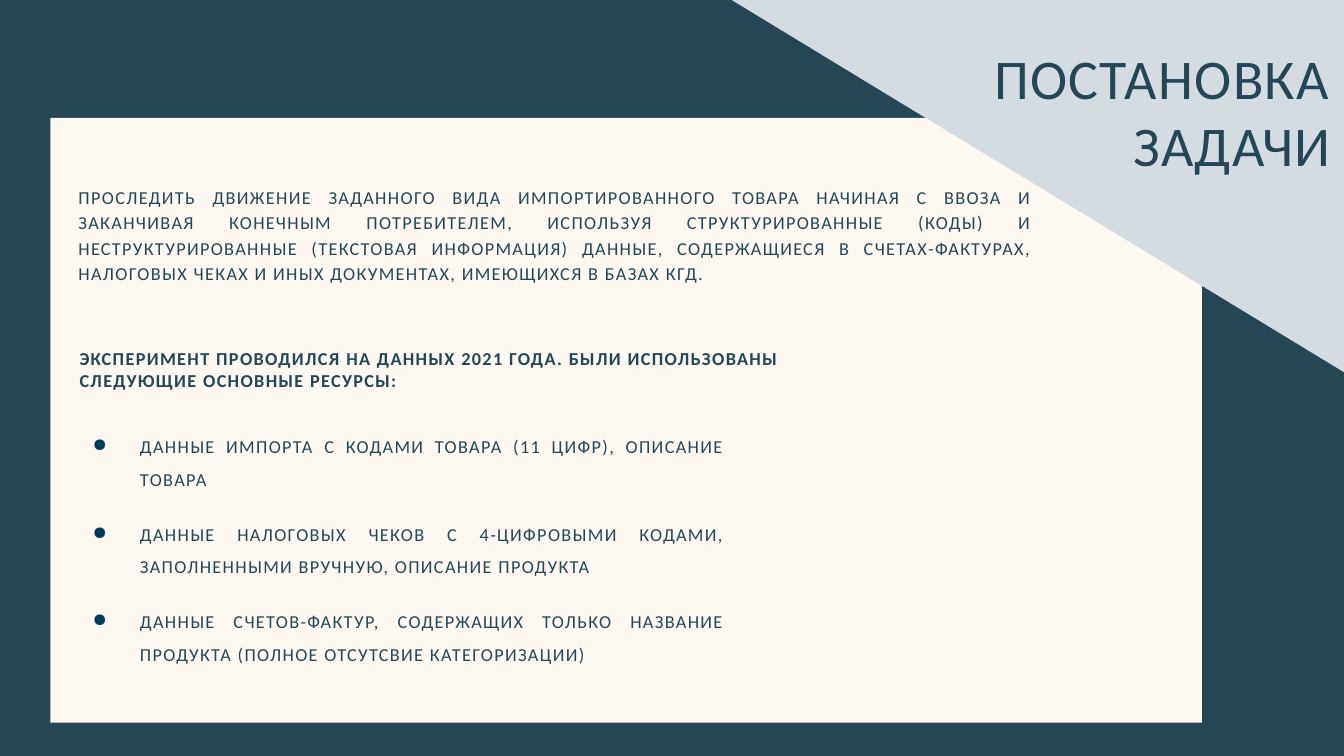
from lxml import etree
from pptx import Presentation
from pptx.dml.color import RGBColor
from pptx.enum import shapes, text
from pptx.oxml import ns
from pptx.util import Inches, Pt

NAVY, CREAM, MIST, BULLET = "244655", "FEF8F2", "D5DCE1", "003B5C"
TASK = (
    "ПРОСЛЕДИТЬ ДВИЖЕНИЕ ЗАДАННОГО ВИДА ИМПОРТИРОВАННОГО ТОВАРА НАЧИНАЯ С ВВОЗА И "
    "ЗАКАНЧИВАЯ КОНЕЧНЫМ ПОТРЕБИТЕЛЕМ, ИСПОЛЬЗУЯ СТРУКТУРИРОВАННЫЕ (КОДЫ) И "
    "НЕСТРУКТУРИРОВАННЫЕ (ТЕКСТОВАЯ ИНФОРМАЦИЯ) ДАННЫЕ, СОДЕРЖАЩИЕСЯ В "
    "СЧЕТАХ-ФАКТУРАХ, НАЛОГОВЫХ ЧЕКАХ И ИНЫХ ДОКУМЕНТАХ, ИМЕЮЩИХСЯ В БАЗАХ КГД."
)
EXPERIMENT = (
    "ЭКСПЕРИМЕНТ ПРОВОДИЛСЯ НА ДАННЫХ 2021 ГОДА. БЫЛИ ИСПОЛЬЗОВАНЫ "
    "СЛЕДУЮЩИЕ ОСНОВНЫЕ РЕСУРСЫ:"
)
RESOURCES = [
    "ДАННЫЕ ИМПОРТА С КОДАМИ ТОВАРА (11 ЦИФР), ОПИСАНИЕ ТОВАРА",
    "ДАННЫЕ НАЛОГОВЫХ ЧЕКОВ С 4-ЦИФРОВЫМИ КОДАМИ, ЗАПОЛНЕННЫМИ ВРУЧНУЮ, ОПИСАНИЕ ПРОДУКТА",
    "ДАННЫЕ СЧЕТОВ-ФАКТУР, СОДЕРЖАЩИХ ТОЛЬКО НАЗВАНИЕ ПРОДУКТА (ПОЛНОЕ ОТСУТСВИЕ КАТЕГОРИЗАЦИИ)",
]


def color(value):
    return RGBColor.from_string(value)


class SlideBuilder:
    font_name = "Calibri"
    letter_spacing = Pt(1)

    def __init__(self, presentation):
        self.slide = presentation.slides.add_slide(presentation.slide_layouts[5])

    def background(self, fill):
        self.slide.background.fill.solid()
        self.slide.background.fill.fore_color.rgb = color(fill)

    def rectangle(self, box, fill, rotation=0):
        shape = self.slide.shapes.add_shape(
            shapes.MSO_SHAPE.RECTANGLE, *map(Inches, box))
        shape.shadow.inherit = False
        shape.fill.solid()
        shape.fill.fore_color.rgb = color(fill)
        shape.line.fill.background()
        shape.rotation = rotation

    def title(self, box, words):
        shape = self.slide.shapes.title
        shape.left, shape.top, shape.width, shape.height = map(Inches, box)
        # Text stays in front of the panels
        shape.element.getparent().append(shape.element)
        self.set_text(shape, words, size=40, align=text.PP_ALIGN.RIGHT)

    def text_box(self, box, words, **style):
        shape = self.slide.shapes.add_textbox(*map(Inches, box))
        return self.set_text(shape, words, **style)

    def bullet(self, box, words):
        paragraph = self.text_box(
            box, words, align=text.PP_ALIGN.JUSTIFY, line_spacing=1.5,
            margin=0.67, indent=-0.47)
        properties = paragraph._p.get_or_add_pPr()
        bullet_color = etree.Element(ns.qn("a:buClr"))
        etree.SubElement(bullet_color, ns.qn("a:srgbClr"), val=BULLET)
        bullet_char = etree.Element(ns.qn("a:buChar"), char="●")
        defaults = properties.find(ns.qn("a:defRPr"))
        defaults.addprevious(bullet_color)
        defaults.addprevious(bullet_char)

    def set_text(self, shape, words, size=13, bold=False, align=text.PP_ALIGN.LEFT,
                 line_spacing=1.0, margin=0, indent=0):
        """Fill a shape with one styled paragraph and return that paragraph."""
        frame = shape.text_frame
        frame.word_wrap = True
        frame.auto_size = text.MSO_AUTO_SIZE.NONE
        frame.vertical_anchor = text.MSO_ANCHOR.TOP
        paragraph = frame.paragraphs[0]
        paragraph.alignment = align
        paragraph.line_spacing = line_spacing
        properties = paragraph._p.get_or_add_pPr()
        properties.set("marL", str(Inches(margin)))
        properties.set("indent", str(Inches(indent)))
        run = paragraph.add_run()
        run.text = words
        run._r.get_or_add_rPr().set("spc", str(int(self.letter_spacing.pt * 100)))
        font = paragraph.font
        font.name, font.size, font.bold = self.font_name, Pt(size), bold
        font.color.rgb = color(NAVY)
        return paragraph


def main():
    presentation = Presentation()
    presentation.slide_width = Inches(13.33)
    presentation.slide_height = Inches(7.5)

    builder = SlideBuilder(presentation)
    builder.background(NAVY)
    builder.rectangle((0.5, 1.17, 11.42, 6), CREAM)
    builder.rectangle((6.73, -3.36, 8.74, 5.25), MIST, rotation=31.3)
    builder.title((8.55, 0.38, 4.75, 1.45), "ПОСТАНОВКА ЗАДАЧИ")
    builder.text_box((0.66, 1.76, 9.67, 1.11), TASK, margin=0.02,
                     align=text.PP_ALIGN.JUSTIFY, line_spacing=1.17)
    builder.text_box((0.69, 3.4, 7.92, 0.54), EXPERIMENT, bold=True)
    for row, resource in enumerate(RESOURCES):
        builder.bullet((0.62, 4.16 + 0.87 * row, 6.66, 0.72), resource)

    presentation.save("out.pptx")


if __name__ == "__main__":
    main()
